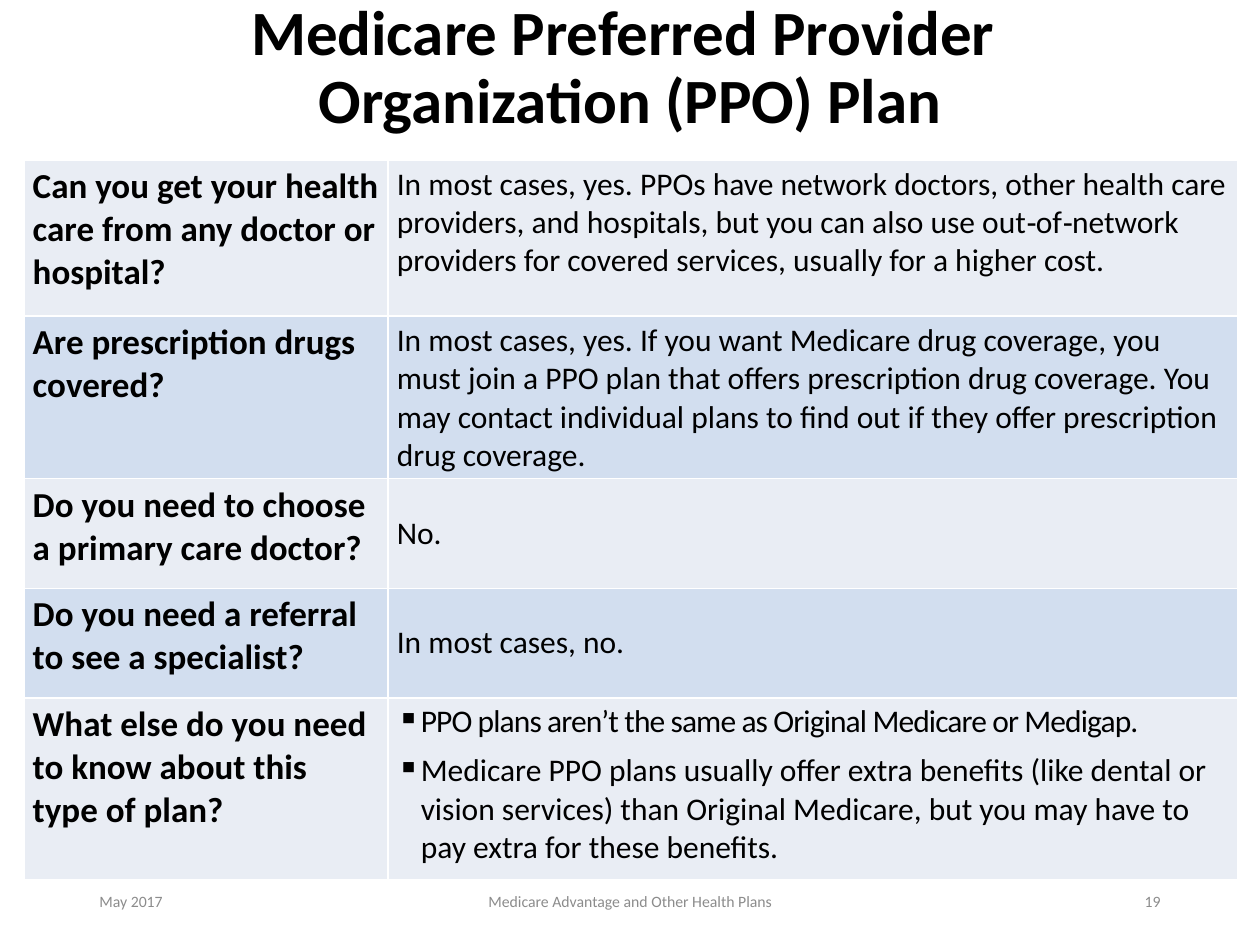
import dataclasses
import typing

import lxml.etree
import pptx
import pptx.dml.color
import pptx.enum.text
import pptx.oxml.ns
import pptx.util

GRID_COLUMNS, GRID_ROWS = 100, 75
ALIGN = pptx.enum.text.PP_ALIGN
ANCHOR = pptx.enum.text.MSO_ANCHOR
FONT = "Calibri"
BLACK, GREY, WHITE = "000000", "8C8C8C", "FFFFFF"
BANDS = ("E9EDF4", "D2DEEF")
TABLE_LEFT, TABLE_TOP = 1.9, 12.7
COLUMN_WIDTHS = (28.9, 67.4)

deck = pptx.Presentation()
deck.slide_width = pptx.util.Inches(10)
deck.slide_height = pptx.util.Inches(7.5)


@dataclasses.dataclass(frozen=True)
class Label:
    text: str
    left: float
    top: float
    width: float
    height: float
    align: ALIGN
    size: float = 9
    color: str = GREY
    bold: bool = False
    line_spacing: float = 1.0


@dataclasses.dataclass(frozen=True)
class Answer:
    text: str
    tracking: int = 0


@dataclasses.dataclass(frozen=True)
class PlanRow:
    question: str
    answers: tuple[Answer, ...]
    height: float
    anchor: ANCHOR = ANCHOR.MIDDLE


LABELS = (
    Label("Medicare Preferred Provider \vOrganization (PPO) Plan", 0, -0.1, 100, 11.1,
          ALIGN.CENTER, 36, BLACK, True, 0.9),
    Label("May 2017", 6.9, 69.5, 22.5, 4, ALIGN.LEFT),
    Label("Medicare Advantage and Other Health Plans", 33.1, 69.5, 33.8, 4, ALIGN.CENTER),
    Label("19", 70.6, 69.5, 22.5, 4, ALIGN.RIGHT),
)

PLAN_ROWS = (
    PlanRow("Can you get your health care from any doctor or hospital?",
            (Answer("In most cases, yes. PPOs have network doctors, other health care "
                    "providers, and hospitals, but you can also use out‑of‑network "
                    "providers for covered services, usually for a higher cost."),),
            12.4, ANCHOR.TOP),
    PlanRow("Are prescription drugs covered?",
            (Answer("In most cases, yes. If you want Medicare drug coverage, you must join "
                    "a PPO plan that offers prescription drug coverage. You may contact "
                    "individual plans to find out if they offer prescription drug coverage."),),
            12.9),
    PlanRow("Do you need to choose a primary care doctor?", (Answer("No."),), 8.7),
    PlanRow("Do you need a referral to see a specialist?", (Answer("In most cases, no."),), 8.7),
    PlanRow("What else do you need to know about this type of plan?",
            (Answer("PPO plans aren’t the same as Original Medicare or Medigap.", -50),
             Answer("Medicare PPO plans usually offer extra benefits (like dental or vision "
                    "services) than Original Medicare, but you may have to pay extra for "
                    "these benefits.")),
            14.4, ANCHOR.TOP),
)


def columns(count: float) -> int:
    return round(deck.slide_width * count / GRID_COLUMNS)


def rows(count: float) -> int:
    return round(deck.slide_height * count / GRID_ROWS)


def color_of(value: str) -> pptx.dml.color.RGBColor:
    return pptx.dml.color.RGBColor.from_string(value)


def apply(target: typing.Any, values: dict[str, typing.Any]) -> None:
    for name, value in values.items():
        setattr(target, name, value)


def style_font(font: typing.Any, size: float, color: str, bold: bool) -> None:
    apply(font, {"name": FONT, "size": pptx.util.Pt(size), "bold": bold})
    font.color.rgb = color_of(color)


def draw_label(page: typing.Any, label: Label) -> None:
    box = page.shapes.add_textbox(columns(label.left), rows(label.top),
                                  columns(label.width), rows(label.height))
    apply(box.text_frame, {"word_wrap": True, "vertical_anchor": ANCHOR.MIDDLE})
    para = box.text_frame.paragraphs[0]
    para.text = label.text
    apply(para, {"alignment": label.align, "line_spacing": label.line_spacing})
    for span in para.runs:
        style_font(span.font, label.size, label.color, label.bold)


def add_borders(cell: typing.Any) -> None:
    properties = cell._tc.get_or_add_tcPr()
    qualify = pptx.oxml.ns.qn
    for side in ("lnL", "lnR", "lnT", "lnB"):
        line = lxml.etree.SubElement(properties, qualify(f"a:{side}"), w=str(pptx.util.Pt(1)))
        fill = lxml.etree.SubElement(line, qualify("a:solidFill"))
        lxml.etree.SubElement(fill, qualify("a:srgbClr"), val=WHITE)


def add_bullet(para: typing.Any) -> None:
    properties = para._p.get_or_add_pPr()
    indent = columns(1.9)
    apply_indents = {"marL": indent, "indent": -indent}
    for name, value in apply_indents.items():
        properties.set(name, str(value))
    lxml.etree.SubElement(properties, pptx.oxml.ns.qn("a:buChar"), char="▪")


def fill_cell(cell: typing.Any, answers: tuple[Answer, ...], size: float, bold: bool,
              anchor: ANCHOR, band: str) -> None:
    apply(cell, {"margin_left": columns(0.7), "margin_right": columns(0.7),
                 "margin_top": rows(0.4), "margin_bottom": rows(0.4),
                 "vertical_anchor": anchor})
    add_borders(cell)
    cell.fill.solid()
    cell.fill.fore_color.rgb = color_of(band)
    frame = cell.text_frame
    for index, answer in enumerate(answers):
        para = frame.add_paragraph() if index else frame.paragraphs[0]
        if len(answers) > 1:
            add_bullet(para)
        if index:
            para.space_before = pptx.util.Pt(6)
        span = para.add_run()
        span.text = answer.text
        style_font(span.font, size, BLACK, bold)
        if answer.tracking:
            span._r.get_or_add_rPr().set("spc", str(answer.tracking))


def draw_plan_table(page: typing.Any) -> None:
    table = page.shapes.add_table(
        len(PLAN_ROWS), len(COLUMN_WIDTHS), columns(TABLE_LEFT), rows(TABLE_TOP),
        columns(sum(COLUMN_WIDTHS)), rows(sum(row.height for row in PLAN_ROWS))).table
    apply(table, {"first_row": False, "horz_banding": False})
    for column, width in zip(table.columns, COLUMN_WIDTHS):
        column.width = columns(width)
    for index, row in enumerate(PLAN_ROWS):
        table.rows[index].height = rows(row.height)
        band = BANDS[index % len(BANDS)]
        fill_cell(table.cell(index, 0), (Answer(row.question),), 20, True, ANCHOR.TOP, band)
        fill_cell(table.cell(index, 1), row.answers, 18, False, row.anchor, band)


def main() -> None:
    page = deck.slides.add_slide(deck.slide_layouts[6])
    for label in LABELS:
        draw_label(page, label)
    draw_plan_table(page)
    deck.save("out.pptx")


if __name__ == "__main__":
    main()
